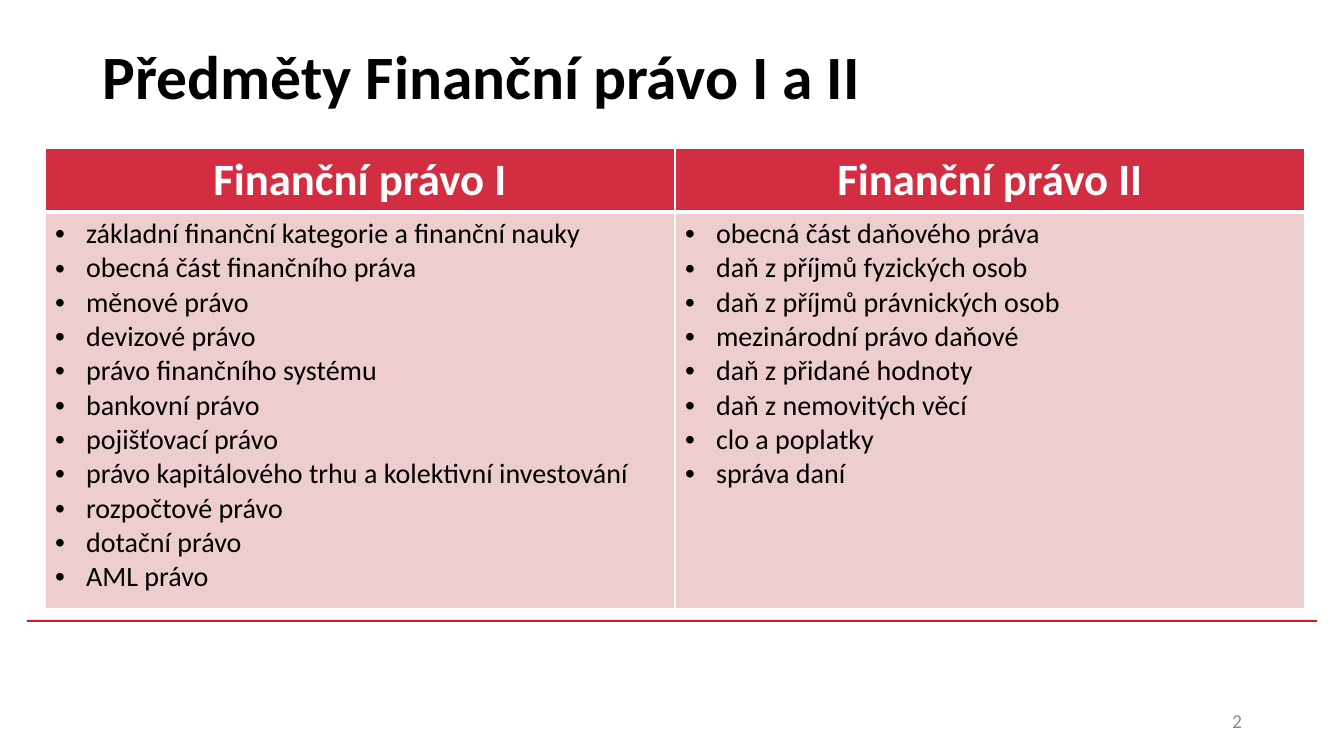
import pptx
import pptx.dml.color
import pptx.enum.shapes
import pptx.enum.text
import pptx.oxml
import pptx.oxml.ns
import pptx.util

PX = 914400 / 100.8  # EMU in one pixel
FONT = "Calibri"
COLOURS = {
    "black": "000000",
    "white": "FFFFFF",
    "rule": "CD1F21",
    "header": "D22D40",
    "body": "EECDCF",
    "number": "8C8C8C",
}
ALIGN = pptx.enum.text.PP_ALIGN
ANCHOR = pptx.enum.text.MSO_ANCHOR

COURSES = {
    "Finanční právo I": [
        "základní finanční kategorie a finanční nauky",
        "obecná část finančního práva",
        "měnové právo",
        "devizové právo",
        "právo finančního systému",
        "bankovní právo",
        "pojišťovací právo",
        "právo kapitálového trhu a kolektivní investování",
        "rozpočtové právo",
        "dotační právo",
        "AML právo",
    ],
    "Finanční právo II": [
        "obecná část daňového práva",
        "daň z příjmů fyzických osob",
        "daň z příjmů právnických osob",
        "mezinárodní právo daňové",
        "daň z přidané hodnoty",
        "daň z nemovitých věcí",
        "clo a poplatky",
        "správa daní",
    ],
}


def px(length):
    return pptx.util.Emu(round(length * PX))


def colour(name):
    return pptx.dml.color.RGBColor.from_string(COLOURS[name])


def add_bullet(paragraph, indent=31):
    properties = paragraph._p.get_or_add_pPr()
    properties.set("marL", str(px(indent)))
    properties.set("indent", str(-px(indent)))
    namespace = pptx.oxml.ns.nsdecls("a")
    properties.append(pptx.oxml.parse_xml(f'<a:buFont {namespace} typeface="Arial"/>'))
    properties.append(pptx.oxml.parse_xml(f'<a:buChar {namespace} char="•"/>'))


def write(frame, lines, size, ink="black", bold=False, align=ALIGN.LEFT, bullets=False):
    for index, line in enumerate(lines):
        paragraph = frame.add_paragraph() if index else frame.paragraphs[0]
        paragraph.alignment = align
        if bullets:
            add_bullet(paragraph)
        run = paragraph.add_run()
        run.text = line
        run.font.name = FONT
        run.font.size = pptx.util.Pt(size)
        run.font.bold = bold
        run.font.color.rgb = colour(ink)


def add_text(slide, text, left, top, width, height, **text_format):
    frame = slide.shapes.add_textbox(px(left), px(top), px(width), px(height)).text_frame
    frame.word_wrap = True
    frame.vertical_anchor = ANCHOR.MIDDLE
    write(frame, [text], **text_format)


def add_rule(slide, left, top, width, height):
    rule = slide.shapes.add_shape(
        pptx.enum.shapes.MSO_SHAPE.RECTANGLE, px(left), px(top), px(width), px(height))
    rule.shadow.inherit = False
    rule.fill.solid()
    rule.fill.fore_color.rgb = colour("rule")
    rule.line.fill.background()


def style_cell(cell, fill, top=1, bottom=1):
    properties = cell._tc.get_or_add_tcPr()
    for side, points in {"L": 1, "R": 1, "T": top, "B": bottom}.items():
        properties.append(pptx.oxml.parse_xml(
            f'<a:ln{side} {pptx.oxml.ns.nsdecls("a")} w="{pptx.util.Pt(points)}">'
            f'<a:solidFill><a:srgbClr val="{COLOURS["white"]}"/></a:solidFill></a:ln{side}>'))
    cell.fill.solid()
    cell.fill.fore_color.rgb = colour(fill)


def add_course_table(slide, left, top, width, row_heights):
    table = slide.shapes.add_table(
        len(row_heights), len(COURSES), px(left), px(top), px(width), px(sum(row_heights))).table
    for row, height in zip(table.rows, row_heights):
        row.height = px(height)
    for index, (course, topics) in enumerate(COURSES.items()):
        table.columns[index].width = px(width / len(COURSES))
        heading, content = table.cell(0, index), table.cell(1, index)
        style_cell(heading, "header", bottom=3)
        write(heading.text_frame, [course], size=32, ink="white", bold=True, align=ALIGN.CENTER)
        style_cell(content, "body", top=3)
        write(content.text_frame, topics, size=20, bullets=True)


def main():
    deck = pptx.Presentation()
    deck.slide_width, deck.slide_height = px(1344), px(756)
    slide = deck.slides.add_slide(deck.slide_layouts[6])

    # Rule below the table
    add_rule(slide, 27, 620, 1290, 2)
    # Title
    add_text(slide, "Předměty Finanční právo I a II", 93, 2, 1159, 146, size=44, bold=True)
    # Topics of both courses
    add_course_table(slide, 45, 148, 1260, [64, 397])
    # Slide number
    add_text(slide, "2", 950, 701, 302, 40, size=14, ink="number", align=ALIGN.RIGHT)

    deck.save("out.pptx")


if __name__ == "__main__":
    main()
